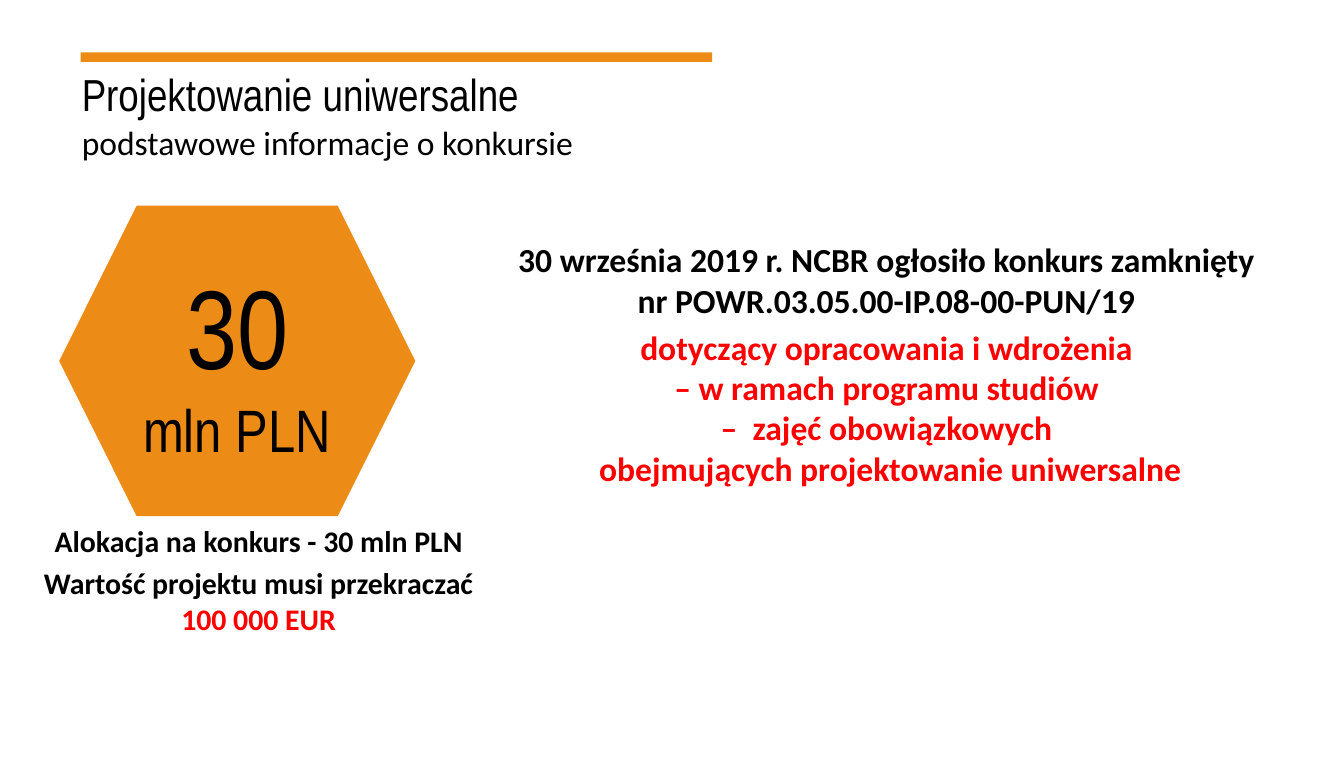
"""Build the slide that introduces the universal design competition."""
from dataclasses import dataclass

import pptx
import pptx.dml.color
import pptx.enum.shapes
import pptx.enum.text
import pptx.shapes.autoshape
import pptx.slide
import pptx.util

Inches = pptx.util.Inches
Points = pptx.util.Pt
Shapes = pptx.enum.shapes.MSO_SHAPE
Align = pptx.enum.text.PP_ALIGN
Anchor = pptx.enum.text.MSO_ANCHOR

ORANGE = pptx.dml.color.RGBColor(0xEC, 0x8B, 0x16)
BLACK = pptx.dml.color.RGBColor(0, 0, 0)
RED = pptx.dml.color.RGBColor(0xFF, 0, 0)


@dataclass(frozen=True)
class Box:
    left: float
    top: float
    width: float
    height: float

    def lengths(self) -> list[pptx.util.Length]:
        return [Inches(value) for value in (self.left, self.top, self.width, self.height)]


@dataclass(frozen=True)
class Run:
    text: str
    size: float
    name: str = "Calibri"
    color: pptx.dml.color.RGBColor = BLACK
    bold: bool = False


@dataclass(frozen=True)
class TextBlock:
    box: Box
    paragraphs: list[list[Run]]
    alignment: Align = Align.LEFT
    space_before: float = 0


TITLE = TextBlock(
    Box(0.51, 0.45, 5.15, 0.5),
    [[Run("Projektowanie uniwersalne", 24, "Arial Narrow")]],
)
SUBTITLE = TextBlock(
    Box(0.51, 0.86, 7.08, 0.4),
    [[Run("podstawowe informacje o konkursie", 18)]],
)
ANNOUNCEMENT = TextBlock(
    Box(3.25, 1.73, 6.75, 1.99),
    [
        [Run("30 września 2019 r. NCBR ogłosiło konkurs zamknięty \n"
             "nr POWR.03.05.00-IP.08-00-PUN/19 ", 18, bold=True)],
        [Run("dotyczący opracowania i wdrożenia \n"
             "– w ramach programu studiów \n"
             "–  zajęć obowiązkowych \n"
             "obejmujących projektowanie uniwersalne", 18, color=RED, bold=True)],
    ],
    Align.CENTER,
    3.6,
)
ALLOCATION = TextBlock(
    Box(0.14, 3.84, 3.57, 1.02),
    [
        [Run("Alokacja na konkurs - 30 mln PLN", 16, bold=True)],
        [Run("Wartość projektu musi przekraczać ", 16, bold=True),
         Run("100 000 EUR", 16, color=RED, bold=True)],
    ],
    Align.CENTER,
    3.2,
)
BUDGET = TextBlock(
    Box(0.44, 1.53, 2.65, 2.31),
    [[Run("30", 60, "Arial Narrow")], [Run("mln PLN", 32, "Arial Narrow")]],
    Align.CENTER,
)


def write_run(paragraph, run: Run) -> None:
    font_values = {"size": Points(run.size), "name": run.name, "bold": run.bold}
    for index, line in enumerate(run.text.split("\n")):
        if index:
            paragraph.add_line_break()
        text_run = paragraph.add_run()
        text_run.text = line
        for attribute, value in font_values.items():
            setattr(text_run.font, attribute, value)
        text_run.font.color.rgb = run.color


def write_text(shape: pptx.shapes.autoshape.Shape, block: TextBlock, anchor: Anchor) -> None:
    frame = shape.text_frame
    for attribute, value in {"word_wrap": True, "vertical_anchor": anchor}.items():
        setattr(frame, attribute, value)
    for index, runs in enumerate(block.paragraphs):
        paragraph = frame.add_paragraph() if index else frame.paragraphs[0]
        paragraph_values = {
            "alignment": block.alignment,
            "space_before": Points(block.space_before if index else 0),
        }
        for attribute, value in paragraph_values.items():
            setattr(paragraph, attribute, value)
        for run in runs:
            write_run(paragraph, run)


def add_text(slide: pptx.slide.Slide, block: TextBlock) -> None:
    write_text(slide.shapes.add_textbox(*block.box.lengths()), block, Anchor.TOP)


def add_orange_shape(
    slide: pptx.slide.Slide, kind: Shapes, box: Box
) -> pptx.shapes.autoshape.Shape:
    shape = slide.shapes.add_shape(kind, *box.lengths())
    shape.shadow.inherit = False
    shape.fill.solid()
    shape.fill.fore_color.rgb = ORANGE
    shape.line.fill.background()
    return shape


def main() -> None:
    presentation = pptx.Presentation()
    for attribute, value in {"slide_width": 10, "slide_height": 5.63}.items():
        setattr(presentation, attribute, Inches(value))
    slide = presentation.slides.add_slide(presentation.slide_layouts[6])

    add_text(slide, ANNOUNCEMENT)
    add_orange_shape(slide, Shapes.RECTANGLE, Box(0.6, 0.39, 4.7, 0.07))
    for block in (TITLE, SUBTITLE):
        add_text(slide, block)
    hexagon = add_orange_shape(slide, Shapes.HEXAGON, BUDGET.box)
    write_text(hexagon, BUDGET, Anchor.MIDDLE)
    add_text(slide, ALLOCATION)

    presentation.save("out.pptx")


if __name__ == "__main__":
    main()
